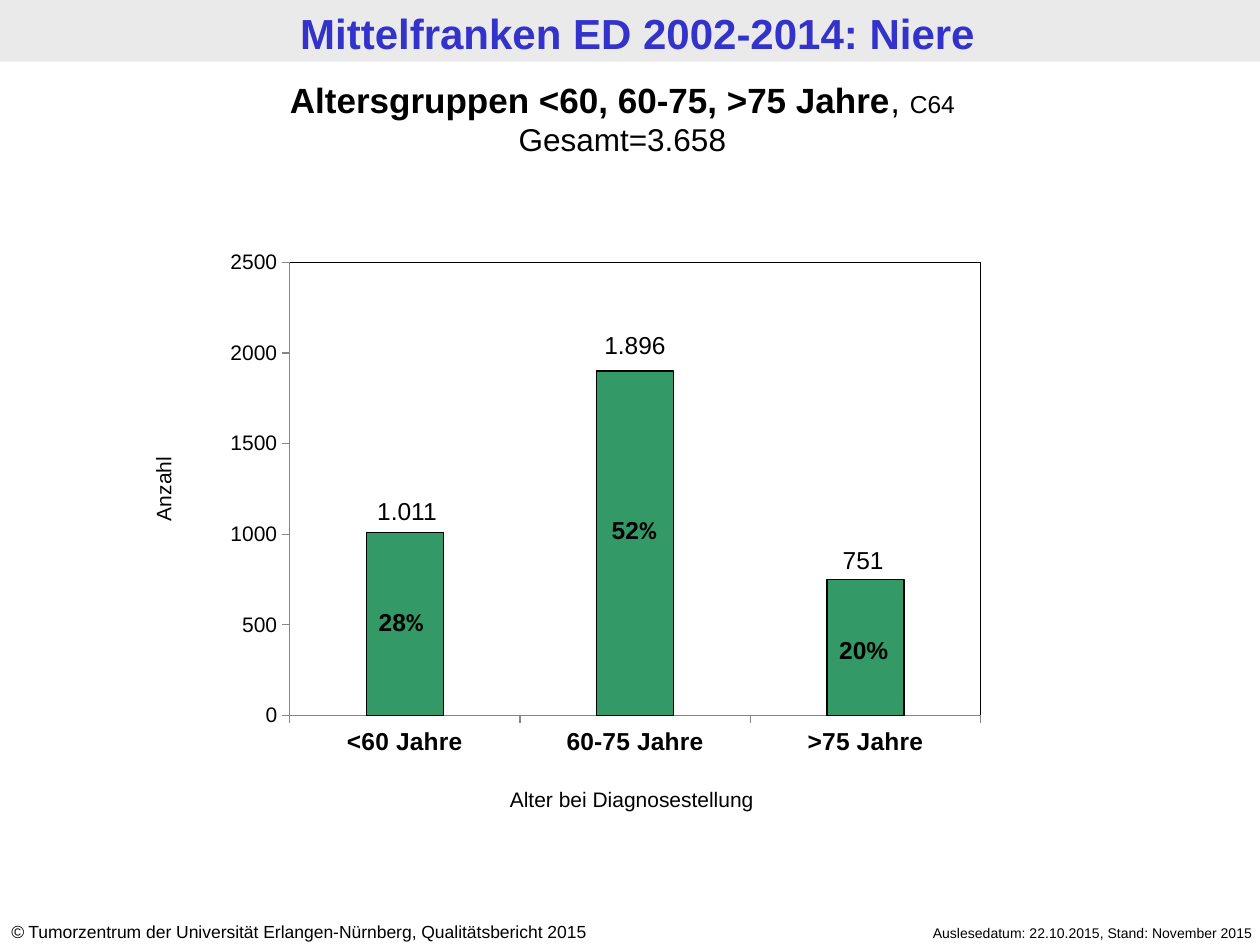
from dataclasses import dataclass

from pptx import Presentation
from pptx import oxml
from pptx import util as u
from pptx.chart import data
from pptx.dml import color
from pptx.enum import chart as charts, shapes, text
from pptx.oxml import ns


@dataclass(frozen=True)
class Theme:
    """Colours, fonts and type sizes of the page."""
    ink: str = "000000"
    title: str = "3333CC"
    band: str = "EAEAEA"
    bar: str = "339966"
    axis: str = "868686"
    font: str = "Arial"
    percent_font: str = "Calibri"
    title_size: int = 24
    head_size: int = 20
    total_size: int = 18
    label_size: int = 14
    axis_size: int = 12
    source_size: int = 10
    date_size: int = 8


@dataclass(frozen=True)
class Box:
    """A region measured in columns and rows of the page grid."""
    left: float
    top: float
    width: float
    height: float

    def inner(self, left, top, width, height):
        """Return a box placed relative to this one."""
        return Box(self.left + left, self.top + top, width, height)

    def emu(self):
        """Return the box as left, top, width and height lengths."""
        return [int(n * CELL) for n in (self.left, self.top, self.width, self.height)]


THEME = Theme()
CELL = u.Inches(0.1)
COLUMNS, ROWS = 100, 75
ALIGN = text.PP_ALIGN
GROUPS = ["<60 Jahre", "60-75 Jahre", ">75 Jahre"]
VALUES = [1010, 1900, 750]
COUNTS = [("1.011", 24.7), ("1.896", 11.5), ("751", 28.6)]
PERCENTS = [
    ([("28", {}), ("%", {"name": THEME.percent_font})], 16.75, 33.5),
    ([("52", {}), ("%", {"name": THEME.percent_font})], 35.25, 26.2),
    ([("20%", {})], 53.45, 35.7),
]


def rgb(value):
    """Turn a hex string into a colour."""
    return color.RGBColor.from_string(value)


def style_font(font, values, ink=THEME.ink):
    """Apply a dict of font values and a colour."""
    for key, value in {"name": THEME.font, **values}.items():
        setattr(font, key, u.Pt(value) if key == "size" else value)
    font.color.rgb = rgb(ink)


def add_text(page, box, lines, size, align=ALIGN.CENTER, ink=THEME.ink, bold=False):
    """Place lines of formatted spans in a text box."""
    shape = page.shapes.add_textbox(*box.emu())
    frame = shape.text_frame
    frame.word_wrap = True
    for index, spans in enumerate(lines):
        para = frame.paragraphs[0] if index == 0 else frame.add_paragraph()
        para.alignment = align
        for words, values in spans:
            span = para.add_run()
            span.text = words
            style_font(span.font, {"size": size, "bold": bold, **values}, ink)
    return shape


def draw_title(page, box):
    """Draw the title band with its heading."""
    band = page.shapes.add_shape(shapes.MSO_SHAPE.RECTANGLE, *box.emu())
    band.shadow.inherit = False
    band.fill.solid()
    band.fill.fore_color.rgb = rgb(THEME.band)
    band.line.fill.background()
    add_text(page, box.inner(0.6, 0.1, box.width, box.height),
             [[("Mittelfranken ED 2002-2014: Niere", {})]],
             THEME.title_size, ink=THEME.title, bold=True)


def draw_heading(page, box):
    """Write the age groups and the total."""
    groups = [("Altersgruppen <60, 60-75, >75 Jahre", {"bold": True}), (", ", {}),
              ("C64", {"size": THEME.label_size})]
    total = [("Gesamt=3.658", {"size": THEME.total_size})]
    add_text(page, box, [groups, total], THEME.head_size)


def frame_plot(chart):
    """Fix the inner plot area and give it a thin outline."""
    area = chart._chartSpace.chart.plotArea
    for old in area.findall(ns.qn("c:layout")):
        area.remove(old)
    places = {"x": 0.113, "y": 0.142, "w": 0.786, "h": 0.772}
    modes = "".join(f'<c:{key}Mode val="edge"/>' for key in "xy")
    sizes = "".join(f'<c:{key} val="{value}"/>' for key, value in places.items())
    area.insert(0, oxml.parse_xml(
        f'<c:layout {ns.nsdecls("c")}><c:manualLayout><c:layoutTarget val="inner"/>'
        f'{modes}{sizes}</c:manualLayout></c:layout>'))
    area.append(oxml.parse_xml(
        f'<c:spPr {ns.nsdecls("c", "a")}><a:noFill/><a:ln w="9525"><a:solidFill>'
        f'<a:srgbClr val="{THEME.ink}"/></a:solidFill></a:ln></c:spPr>'))


def draw_columns(page, box):
    """Draw the column chart of the three age groups."""
    table = data.CategoryChartData()
    table.categories = GROUPS
    table.add_series("Anzahl", VALUES)
    kind = charts.XL_CHART_TYPE.COLUMN_STACKED
    chart = page.shapes.add_chart(kind, *box.emu(), table).chart
    chart.has_legend = chart.has_title = False
    style_font(chart.font, {"size": THEME.axis_size})
    plot = chart.plots[0]
    for key, value in {"gap_width": 200, "overlap": 100, "vary_by_categories": False}.items():
        setattr(plot, key, value)
    bars = plot.series[0].format
    bars.fill.solid()
    bars.fill.fore_color.rgb = rgb(THEME.bar)
    bars.line.color.rgb = rgb(THEME.ink)
    bars.line.width = u.Pt(0.75)
    scale = {"minimum_scale": 0, "maximum_scale": 2500, "major_unit": 500}
    axes = [(chart.category_axis, {}, {"size": THEME.label_size, "bold": True}),
            (chart.value_axis, scale, {"size": THEME.axis_size, "bold": False})]
    for axis, values, font in axes:
        marks = {"has_major_gridlines": False, "major_tick_mark": charts.XL_TICK_MARK.OUTSIDE}
        for key, value in {**marks, **values}.items():
            setattr(axis, key, value)
        style_font(axis.tick_labels.font, font)
        axis.format.line.color.rgb = rgb(THEME.axis)
    frame_plot(chart)


def draw_chart(page, box):
    """Draw the chart with its counts, shares and axis titles."""
    draw_columns(page, box)
    for index, (count, top) in enumerate(COUNTS):
        add_text(page, box.inner(12.1 + 18.1 * index, top, 10.2, 3.4),
                 [[(count, {})]], THEME.label_size)
    for spans, middle, top in PERCENTS:
        add_text(page, box.inner(middle - 3.5, top, 7, 3.4), [spans],
                 THEME.label_size, bold=True)
    add_text(page, box.inner(18.4, 47.7, 33.3, 3),
             [[("Alter bei Diagnosestellung", {})]], THEME.axis_size)
    side = add_text(page, box.inner(-15.2, 23.1, 26.1, 3), [[("Anzahl", {})]], THEME.axis_size)
    side.rotation = 270


def draw_footer(page, box):
    """Write the source on the left and the dates on the right."""
    source = [("©", {"italic": True}),
              (" Tumorzentrum der Universität Erlangen-Nürnberg, Qualitätsbericht 2015", {})]
    add_text(page, box.inner(-0.1, 0, 52.4, 2.7), [source], THEME.source_size, ALIGN.LEFT)
    add_text(page, box.inner(66.5, 0.3, 33.9, 2.4),
             [[("Auslesedatum: 22.10.2015, Stand: November 2015", {})]],
             THEME.date_size, ALIGN.RIGHT)


def main():
    """Build the deck with its single page."""
    deck = Presentation()
    deck.slide_width, deck.slide_height = COLUMNS * CELL, ROWS * CELL
    page = deck.slides.add_slide(deck.slide_layouts[6])
    draw_title(page, Box(0, 0, COLUMNS, 4.9))
    draw_heading(page, Box(0, 5.7, 98.8, 7.4))
    draw_chart(page, Box(15.1, 14.2, 69.8, 46.6))
    draw_footer(page, Box(0, 72.6, COLUMNS, 2.7))
    deck.save("out.pptx")


if __name__ == "__main__":
    main()
